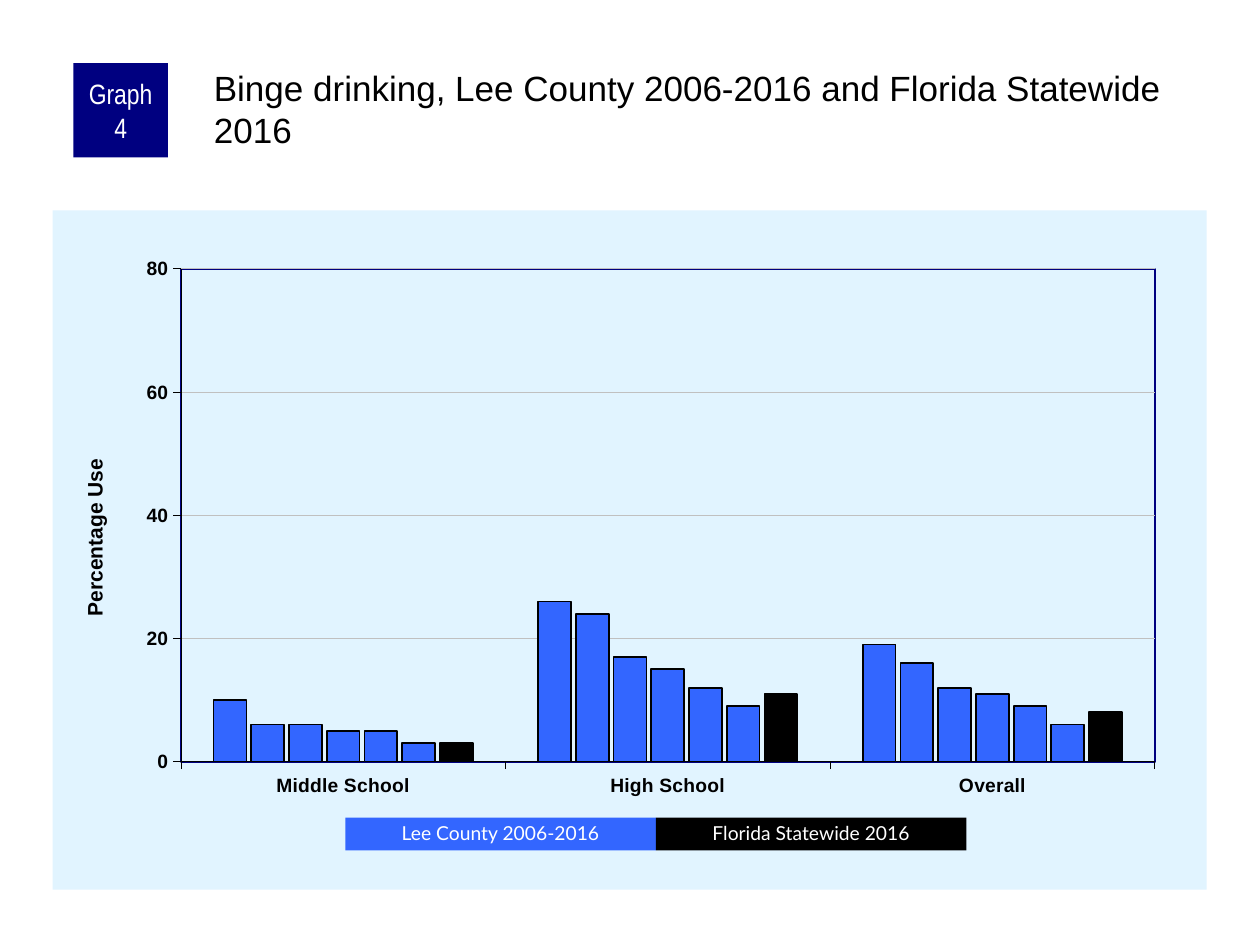
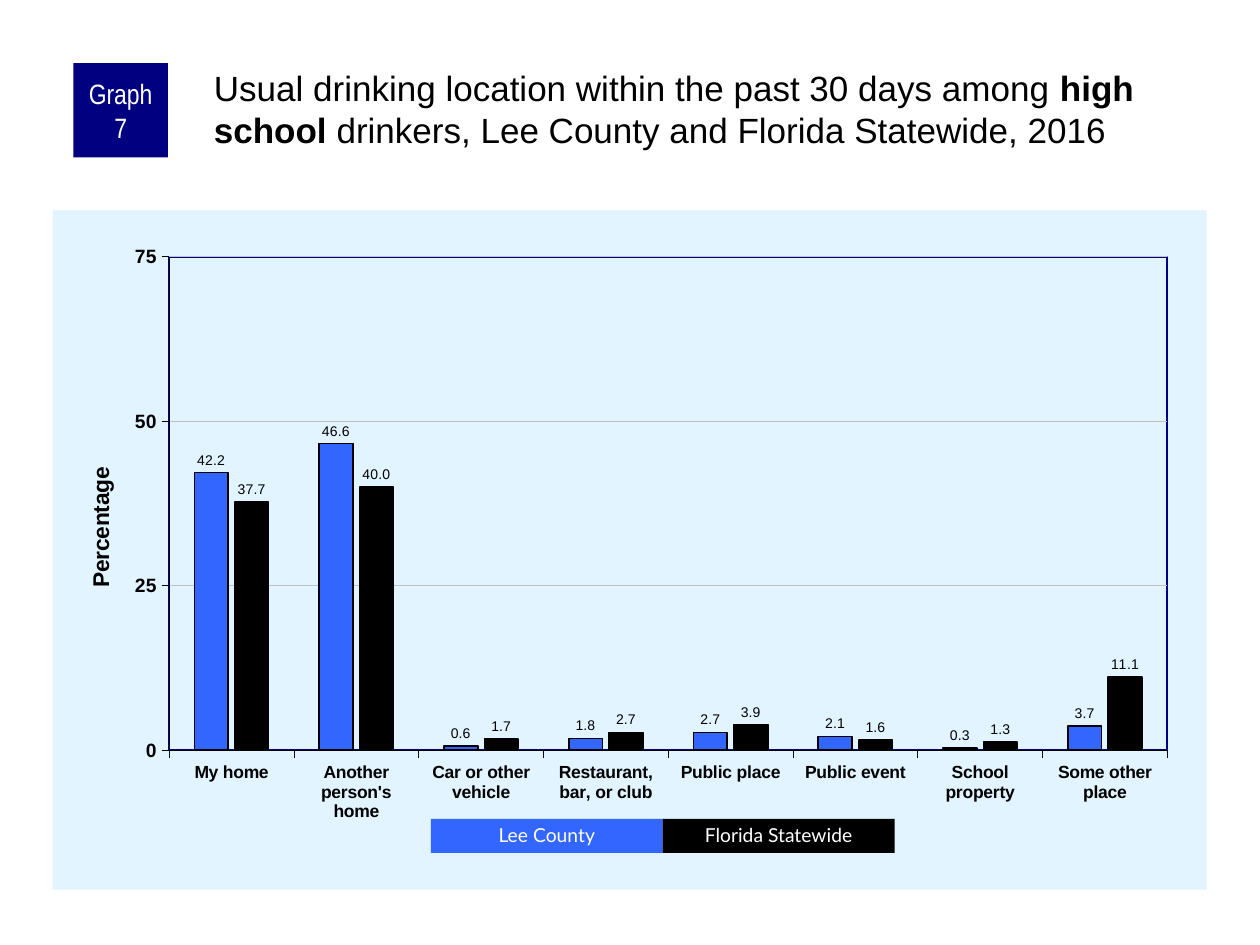
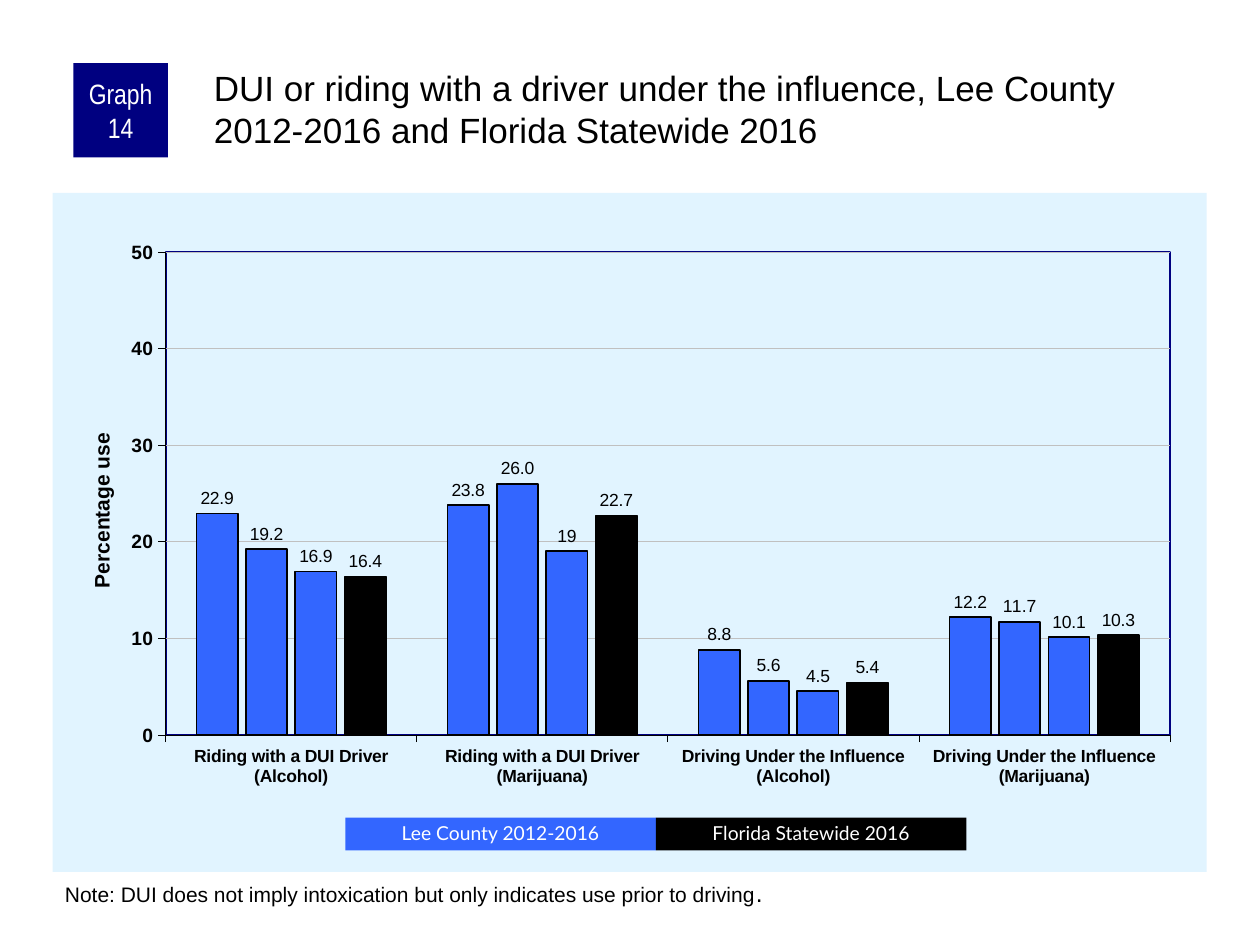
from lxml import etree
from pptx import Presentation
from pptx import util as u
from pptx.chart.data import CategoryChartData
from pptx.dml.color import RGBColor
from pptx.enum import chart as charts, shapes, text
from pptx.oxml import ns, parse_xml

COLUMNS, ROWS = 40, 30
CHART_LEFT, CHART_WIDTH, CHART_HEIGHT = 1.67, 36.64, 21.56
NAVY, BLUE, BLACK, WHITE = "000080", "3366FF", "000000", "FFFFFF"
PANEL, GRID = "E1F4FF", "C0C0C0"
BODY, NARROW, LEGEND = "Arial", "Arial Narrow", "Lato"


def color(hex_string):
    return RGBColor.from_string(hex_string)


def set_font(font, size, name=BODY, fill=BLACK, bold=False):
    font.size, font.name, font.bold = u.Pt(size), name, bold
    font.fill.solid()
    font.fill.fore_color.rgb = color(fill)


def set_line(line, fill, width):
    line.fill.solid()
    line.fill.fore_color.rgb = color(fill)
    line.width = u.Pt(width)


def shape_properties(inner):
    return parse_xml(f'<c:spPr {ns.nsdecls("c", "a")}>{inner}</c:spPr>')


def place(element, index, **settings):
    """Give a chart part a manual layout; index is where a new layout goes."""
    layout = element.find(ns.qn("c:layout"))
    if layout is None:
        layout = etree.Element(ns.qn("c:layout"))
        element.insert(index, layout)
    manual = etree.SubElement(layout, ns.qn("c:manualLayout"))
    for name, value in settings.items():
        setting = etree.SubElement(manual, ns.qn(f"c:{name}"))
        setting.set("val", value if isinstance(value, str) else f"{value:.4f}")


class GraphDeck:
    """Holds the presentation, its style and the current slide."""

    def __init__(self):
        self.presentation = Presentation()
        self.presentation.slide_width = u.Inches(10)
        self.presentation.slide_height = u.Inches(7.5)
        self.slide = None

    def new_slide(self):
        layout = self.presentation.slide_layouts[6]
        self.slide = self.presentation.slides.add_slide(layout)

    def box(self, left, top, width, height):
        """Turn columns and rows into slide lengths."""
        column = self.presentation.slide_width / COLUMNS
        row = self.presentation.slide_height / ROWS
        return [u.Emu(round(cells * unit)) for cells, unit in
                zip((left, top, width, height), (column, row, column, row))]

    def fill_text(self, shape, runs, insets=None, align=text.PP_ALIGN.LEFT,
                  anchor=text.MSO_ANCHOR.TOP, spacing=None):
        """Fill a shape with one paragraph; each run is (text, font settings)."""
        frame = shape.text_frame
        frame.word_wrap, frame.vertical_anchor = True, anchor
        if insets:
            (frame.margin_left, frame.margin_top, frame.margin_right,
             frame.margin_bottom) = [u.Inches(inset) for inset in insets]
        paragraph = frame.paragraphs[0]
        paragraph.alignment = align
        if spacing:
            paragraph.line_spacing = spacing
        for words, settings in runs:
            run = paragraph.add_run()
            run.text = words
            set_font(run.font, **settings)

    def text_box(self, area, runs, insets=None):
        shape = self.slide.shapes.add_textbox(*self.box(*area))
        self.fill_text(shape, runs, insets)

    def label_box(self, area, fill, words, size, font, **layout):
        """A filled rectangle with centred white text."""
        shape = self.slide.shapes.add_shape(
            shapes.MSO_SHAPE.RECTANGLE, *self.box(*area))
        shape.shadow.inherit = False
        shape.fill.solid()
        shape.fill.fore_color.rgb = color(fill)
        shape.line.fill.background()
        self.fill_text(shape, [(words, dict(size=size, name=font, fill=WHITE))],
                       align=text.PP_ALIGN.CENTER,
                       anchor=text.MSO_ANCHOR.MIDDLE, **layout)

    def heading(self, number, title):
        """Badge and title; title is a list of (text, bold)."""
        self.label_box((2.33, 2, 3, 3), NAVY, f"Graph {number}", 16, NARROW,
                       insets=(0.05, 0, 0.05, 0))
        self.text_box((6.67, 2, 31.68, 3.32),
                      [(words, dict(size=20, bold=bold)) for words, bold in title],
                      insets=(0.03, 0.03, 0, 0))

    def legend(self, left, top, width, height, names):
        for index, (name, fill) in enumerate(zip(names, (BLUE, BLACK))):
            self.label_box((left + index * width, top, width, height), fill,
                           name, 11, LEGEND, spacing=0.9)

    def axis_title(self, axis, words, size, left, top):
        title = axis.axis_title
        run = title.text_frame.paragraphs[0].add_run()
        run.text = words
        set_font(run.font, size, bold=True)
        body = title.element.find(".//" + ns.qn("a:bodyPr"))
        body.set("rot", "-5400000")
        body.set("vert", "horz")
        place(title.element, 1, xMode="edge", yMode="edge",
              x=left / CHART_WIDTH, y=top / CHART_HEIGHT)

    def style_axis(self, axis, size):
        axis.major_tick_mark = charts.XL_TICK_MARK.OUTSIDE
        axis.minor_tick_mark = charts.XL_TICK_MARK.NONE
        set_line(axis.format.line, BLACK, 0.25)
        set_font(axis.tick_labels.font, size, bold=True)

    def style_series(self, series, fill, label_format, label_size):
        series.format.fill.solid()
        series.format.fill.fore_color.rgb = color(fill)
        series.invert_if_negative = False
        set_line(series.format.line, BLACK, 1)
        if label_format:
            labels = series.data_labels
            labels.show_value = True
            labels.position = charts.XL_LABEL_POSITION.OUTSIDE_END
            labels.number_format = label_format
            labels.number_format_is_linked = False
            set_font(labels.font, label_size)

    def column_chart(self, top, categories, values, plot_area, axis_title,
                     maximum, step, gap, overlap, category_size=10,
                     label_formats=None, label_size=10):
        """Columns in blue, the last series in black."""
        data = CategoryChartData()
        data.categories = categories
        for number, row in enumerate(values, 1):
            data.add_series(f"Series {number}", row)
        area = self.box(CHART_LEFT, top, CHART_WIDTH, CHART_HEIGHT)
        chart = self.slide.shapes.add_chart(
            charts.XL_CHART_TYPE.COLUMN_CLUSTERED, *area, data).chart
        chart.has_title = chart.has_legend = False
        set_font(chart.font, 10)

        plot = chart.plots[0]
        plot.gap_width, plot.overlap, plot.vary_by_categories = gap, overlap, False
        fills = [BLUE] * (len(values) - 1) + [BLACK]
        formats = label_formats or [None] * len(values)
        for series, fill, label_format in zip(plot.series, fills, formats):
            self.style_series(series, fill, label_format, label_size)

        self.style_axis(chart.category_axis, category_size)
        chart.category_axis.has_major_gridlines = False
        axis = chart.value_axis
        self.style_axis(axis, 11)
        axis.minimum_scale, axis.maximum_scale, axis.major_unit = 0, maximum, step
        axis.tick_labels.number_format = "0"
        axis.tick_labels.number_format_is_linked = False
        set_line(axis.major_gridlines.format.line, GRID, 0.25)
        self.axis_title(axis, *axis_title)

        chart_element = chart.element.find(ns.qn("c:chart"))
        chart_element.addnext(shape_properties(
            f'<a:solidFill><a:srgbClr val="{PANEL}"/></a:solidFill>'
            '<a:ln><a:noFill/></a:ln>'))
        plot_element = chart_element.find(ns.qn("c:plotArea"))
        plot_element.append(shape_properties(
            f'<a:noFill/><a:ln w="{u.Pt(1)}"><a:solidFill>'
            f'<a:srgbClr val="{NAVY}"/></a:solidFill></a:ln>'))
        left, plot_top, width, height = plot_area
        place(plot_element, 0, layoutTarget="inner", xMode="edge", yMode="edge",
              x=left / CHART_WIDTH, y=plot_top / CHART_HEIGHT,
              w=width / CHART_WIDTH, h=height / CHART_HEIGHT)


def binge_drinking(deck):
    deck.new_slide()
    deck.column_chart(
        6.68, ["Middle School", "High School", "Overall"],
        [(10, 26, 19), (6, 24, 16), (6, 17, 12), (5, 15, 11), (5, 12, 9),
         (3, 9, 6), (3, 11, 8)],
        plot_area=(4.07, 1.85, 30.92, 15.65),
        axis_title=("Percentage Use", 12, 0.81, 7.76),
        maximum=80, step=20, gap=200, overlap=-15, category_size=11)
    deck.heading(4, [("Binge drinking, Lee County 2006-2016 and "
                      "Florida Statewide 2016", False)])
    deck.legend(10.96, 25.96, 9.86, 1.04,
                ["Lee County 2006-2016", "Florida Statewide 2016"])


def drinking_location(deck):
    deck.new_slide()
    deck.column_chart(
        6.68, ["My home", "Another person's home", "Car or other vehicle",
               "Restaurant, bar, or club", "Public place", "Public event",
               "School property", "Some other place"],
        [(42.2, 46.6, 0.6, 1.8, 2.7, 2.1, 0.3, 3.7),
         (37.7, 40, 1.7, 2.7, 3.9, 1.6, 1.3, 11.1)],
        plot_area=(3.7, 1.47, 31.69, 15.67),
        axis_title=("Percentage", 13, 0.95, 8.02),
        maximum=75, step=25, gap=150, overlap=-20,
        label_formats=["0.0", "#,##0.0"], label_size=8)
    deck.heading(7, [
        ("Usual drinking location within the past 30 days among ", False),
        ("high school", True),
        (" drinkers, Lee County and Florida Statewide, 2016", False)])
    deck.legend(13.68, 26, 7.36, 1.08, ["Lee County", "Florida Statewide"])


def driving_under_influence(deck):
    deck.new_slide()
    deck.column_chart(
        6.12, [f"{activity} ({substance})"
               for activity in ("Riding with a DUI Driver",
                                "Driving Under the Influence")
               for substance in ("Alcohol", "Marijuana")],
        [(22.9, 23.8, 8.8, 12.2), (19.2, 26, 5.6, 11.7),
         (16.9, 19, 4.5, 10.1), (16.4, 22.7, 5.4, 10.3)],
        plot_area=(3.59, 1.88, 31.88, 15.33),
        axis_title=("Percentage use", 12, 1.03, 7.5),
        maximum=50, step=10, gap=150, overlap=-20,
        label_formats=["0.0", "0.0", "General", "General"])
    deck.heading(14, [("DUI or riding with a driver under the influence, "
                       "Lee County 2012-2016 and Florida Statewide 2016", False)])
    deck.text_box((CHART_LEFT, 27.68, 36.68, 1.36), [
        ("Note: DUI does not imply intoxication but only indicates use "
         "prior to driving", dict(size=12)),
        (".", dict(size=14))])
    deck.legend(10.96, 25.96, 9.86, 1.04,
                ["Lee County 2012-2016", "Florida Statewide 2016"])


def main():
    deck = GraphDeck()
    for build in (binge_drinking, drinking_location, driving_under_influence):
        build(deck)
    deck.presentation.save("out.pptx")


if __name__ == "__main__":
    main()
